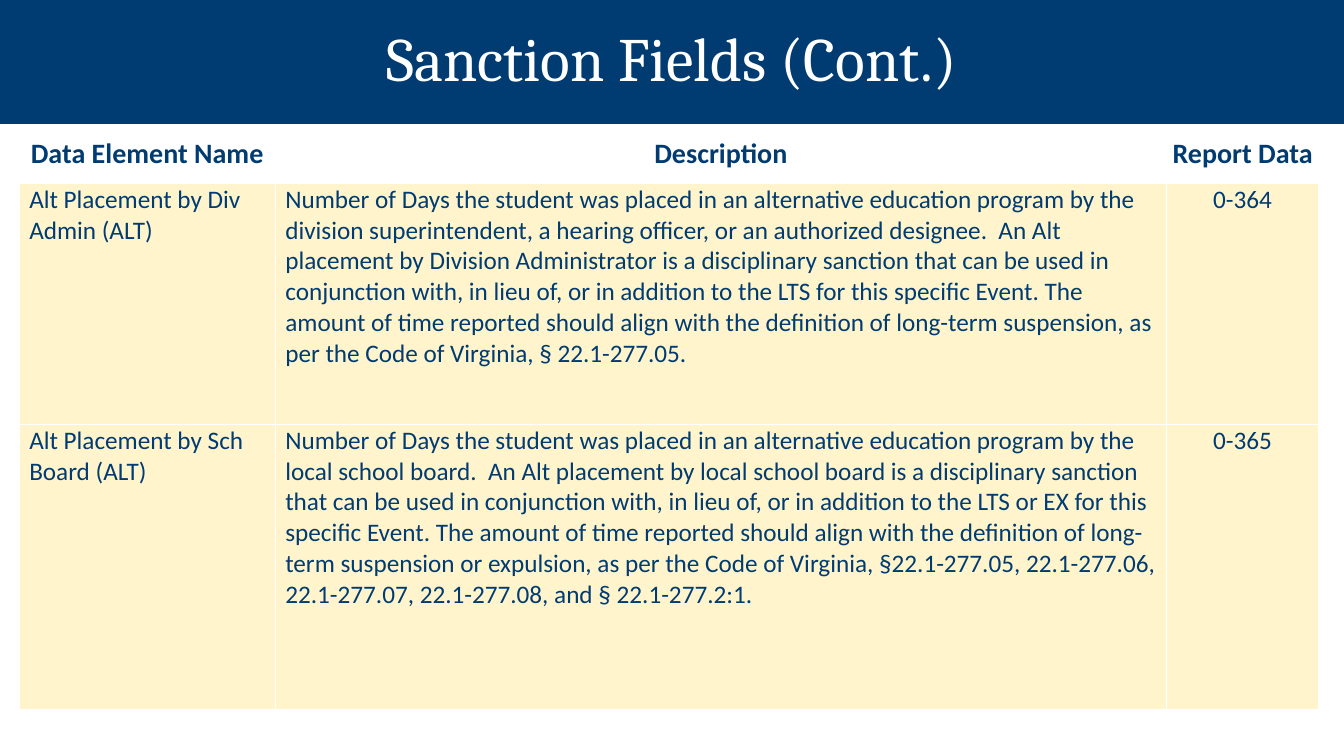
from pptx import Presentation
from pptx.dml.color import RGBColor
from pptx.enum.text import MSO_ANCHOR, PP_ALIGN
from pptx.oxml import parse_xml
from pptx.oxml.ns import nsdecls
from pptx.util import Inches, Pt

COLORS = {"navy": "003C71", "cream": "FFF4CC", "white": "FFFFFF"}
TITLE = "Sanction Fields (Cont.)"
ROWS = [
    ("Data Element Name", "Description", "Report Data"),
    (
        "Alt Placement by Div Admin (ALT)",
        "Number of Days the student was placed in an alternative education program "
        "by the division superintendent, a hearing officer, or an authorized designee.  "
        "An Alt placement by Division Administrator is a disciplinary sanction that can "
        "be used in conjunction with, in lieu of, or in addition to the LTS for this "
        "specific Event. The amount of time reported should align with the definition "
        "of long-term suspension, as per the Code of Virginia, § 22.1-277.05.",
        "0-364",
    ),
    (
        "Alt Placement by Sch Board (ALT)",
        "Number of Days the student was placed in an alternative education program "
        "by the local school board.  An Alt placement by local school board is a "
        "disciplinary sanction that can be used in conjunction with, in lieu of, or in "
        "addition to the LTS or EX for this specific Event. The amount of time reported "
        "should align with the definition of long-term suspension or expulsion, as per "
        "the Code of Virginia, §22.1-277.05, 22.1-277.06, 22.1-277.07, 22.1-277.08, "
        "and § 22.1-277.2:1.",
        "0-365",
    ),
]
COLUMN_WIDTHS = (2.54, 8.84, 1.51)
ROW_HEIGHTS = (0.47, 2.39, 2.83)
TABLE_LEFT, TABLE_TOP = 0.19, 1.35


def color(name):
    return RGBColor.from_string(COLORS[name])


def format_text(paragraph, font_name, size, color_name, bold=False):
    for span in paragraph.runs:
        span.font.name = font_name
        span.font.size = Pt(size)
        span.font.bold = bold
        span.font.color.rgb = color(color_name)


def add_borders(cell):
    properties = cell._tc.get_or_add_tcPr()
    for side in ("lnL", "lnR", "lnT", "lnB"):
        properties.append(parse_xml(
            f'<a:{side} {nsdecls("a")} w="{Pt(1)}"><a:solidFill>'
            f'<a:srgbClr val="{COLORS["white"]}"/></a:solidFill></a:{side}>'
        ))


def add_title(page):
    title = page.shapes.title
    title.left = title.top = 0
    title.width, title.height = Inches(13.33), Inches(1.23)
    title.fill.solid()
    title.fill.fore_color.rgb = color("navy")
    title.text_frame.text = TITLE
    title.text_frame.vertical_anchor = MSO_ANCHOR.MIDDLE
    para = title.text_frame.paragraphs[0]
    para.alignment = PP_ALIGN.CENTER
    para.line_spacing = 0.9
    format_text(para, "Cambria", 44, "white")


def fill_cell(cell, text, is_header, is_centered):
    cell.text_frame.text = text
    cell.margin_left = Inches(0.01 if is_centered else 0.1)
    cell.margin_right = cell.margin_top = Inches(0.01)
    cell.margin_bottom = 0
    cell.vertical_anchor = MSO_ANCHOR.TOP
    para = cell.text_frame.paragraphs[0]
    para.alignment = PP_ALIGN.CENTER if is_centered else PP_ALIGN.LEFT
    format_text(para, "Calibri", 20 if is_header else 18, "navy", is_header)
    add_borders(cell)
    if is_header:
        cell.fill.background()
    else:
        cell.fill.solid()
        cell.fill.fore_color.rgb = color("cream")


def add_field_table(page):
    table = page.shapes.add_table(
        len(ROWS), len(COLUMN_WIDTHS), Inches(TABLE_LEFT), Inches(TABLE_TOP),
        Inches(sum(COLUMN_WIDTHS)), Inches(sum(ROW_HEIGHTS)),
    ).table
    table.first_row = table.horz_banding = False
    for column, width in zip(table.columns, COLUMN_WIDTHS):
        column.width = Inches(width)
    for row_index, (row, height) in enumerate(zip(ROWS, ROW_HEIGHTS)):
        table.rows[row_index].height = Inches(height)
        is_header = row_index == 0
        for column_index, text in enumerate(row):
            is_centered = is_header or column_index == len(row) - 1
            fill_cell(table.cell(row_index, column_index), text, is_header, is_centered)


def main():
    deck = Presentation()
    deck.slide_width, deck.slide_height = Inches(13.33), Inches(7.5)
    page = deck.slides.add_slide(deck.slide_layouts[5])
    add_title(page)
    add_field_table(page)
    deck.save("out.pptx")


if __name__ == "__main__":
    main()
